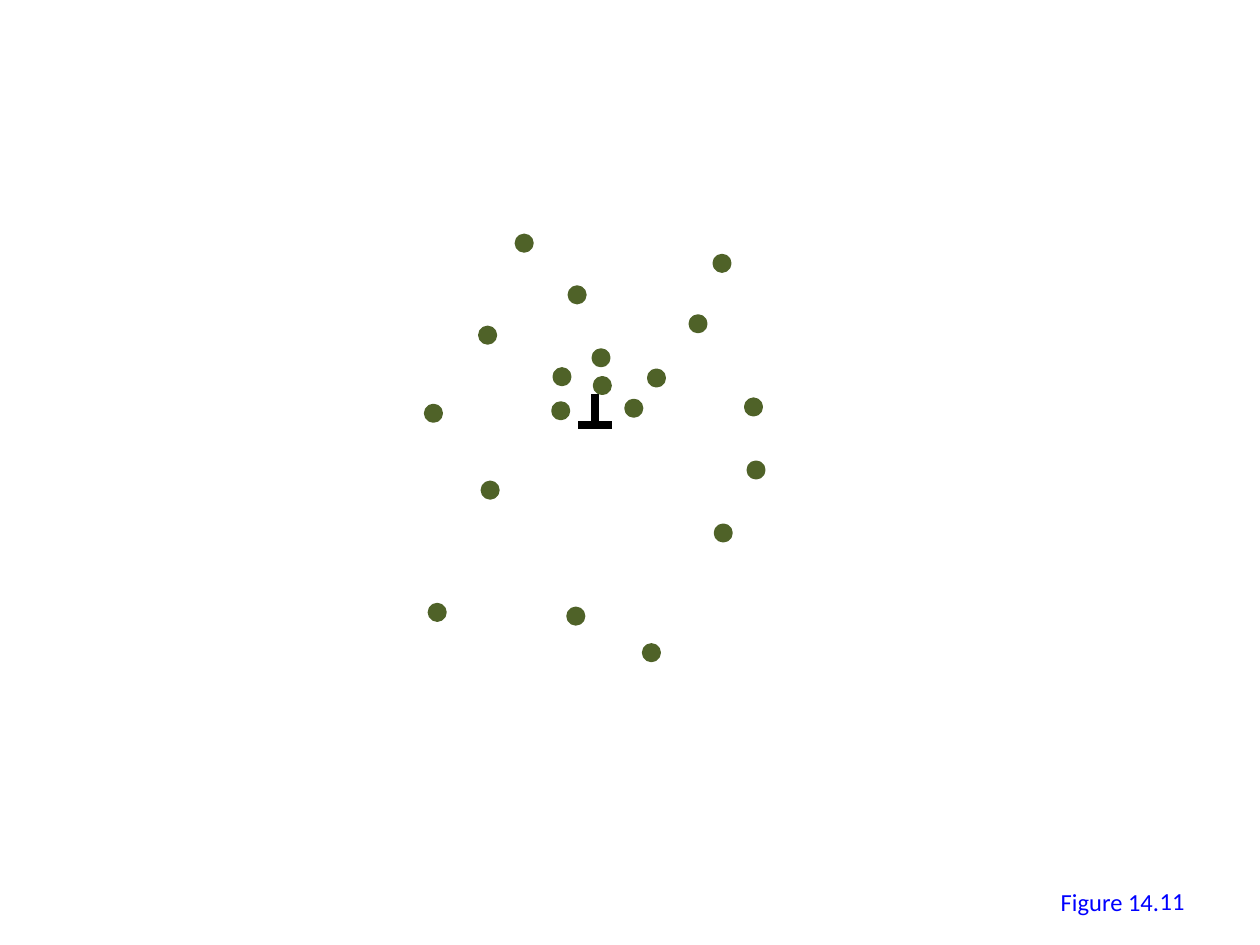
from dataclasses import dataclass

from lxml import etree
from pptx import Presentation
from pptx.dml.color import RGBColor
from pptx.enum.shapes import MSO_CONNECTOR, MSO_SHAPE
from pptx.enum.text import MSO_ANCHOR, PP_ALIGN
from pptx.oxml.ns import qn
from pptx.util import Inches, Pt

STRAIGHT = MSO_CONNECTOR.STRAIGHT
OVAL = MSO_SHAPE.OVAL
TOP, MIDDLE = MSO_ANCHOR.TOP, MSO_ANCHOR.MIDDLE
LEFT, RIGHT = PP_ALIGN.LEFT, PP_ALIGN.RIGHT

COLUMNS, ROWS = 100, 75
DOT_SIZE = 1.2


@dataclass(frozen=True)
class Theme:
    font: str = "Calibri"
    caption_size: float = 14
    caption: RGBColor = RGBColor(0x00, 0x00, 0xFF)
    dot: RGBColor = RGBColor(0x4F, 0x62, 0x28)
    dot_line: float = 2.25
    marker: RGBColor = RGBColor(0x00, 0x00, 0x00)
    marker_line: float = 4.5


class Canvas:
    def __init__(self, deck, theme):
        self.theme = theme
        self.slide = deck.slides.add_slide(deck.slide_layouts[6])
        self.column = deck.slide_width / COLUMNS
        self.row = deck.slide_height / ROWS

    def place(self, column, row):
        return round(column * self.column), round(row * self.row)

    def dot(self, column, row):
        corner = self.place(column - DOT_SIZE / 2, row - DOT_SIZE / 2)
        dot = self.slide.shapes.add_shape(OVAL, *corner, *self.place(DOT_SIZE, DOT_SIZE))
        dot.shadow.inherit = False
        dot.fill.solid()
        dot.fill.fore_color.rgb = self.theme.dot
        dot.line.color.rgb = self.theme.dot
        dot.line.width = Pt(self.theme.dot_line)

    def stroke(self, start, end):
        stroke = self.slide.shapes.add_connector(STRAIGHT, *self.place(*start), *self.place(*end))
        stroke.line.color.rgb = self.theme.marker
        stroke.line.width = Pt(self.theme.marker_line)
        etree.SubElement(stroke._element.spPr, qn("a:effectLst"))

    def text(self, words, *, corner, size, align=LEFT, anchor=TOP, wrap=True):
        box = self.slide.shapes.add_textbox(*self.place(*corner), *self.place(*size))
        frame = box.text_frame
        frame.word_wrap = wrap
        frame.vertical_anchor = anchor
        paragraph = frame.paragraphs[0]
        paragraph.text = words
        paragraph.alignment = align
        paragraph.font.name = self.theme.font
        paragraph.font.size = Pt(self.theme.caption_size)
        paragraph.font.color.rgb = self.theme.caption


DOT_CENTRES = [
    (47.8, 30.6), (44.5, 32.6), (44.6, 29.9), (47.7, 28.4), (50.3, 32.4),
    (52.1, 30), (55.4, 25.7), (57.3, 20.9), (45.8, 23.4), (41.6, 19.3),
    (38.7, 26.6), (34.4, 32.8), (38.9, 38.9), (59.8, 32.3), (60, 37.3),
    (57.4, 42.3), (45.7, 48.9), (34.7, 48.6), (51.7, 51.8),
]


def main():
    deck = Presentation()
    deck.slide_width, deck.slide_height = Inches(10), Inches(7.5)
    canvas = Canvas(deck, Theme())

    canvas.text("Figure 14.", corner=(83.2, 69.9), size=(9.9, 3.4), wrap=False)
    base_row, stem_column = 33.7, 47.2
    canvas.stroke((45.9, base_row), (48.6, base_row))
    canvas.stroke((stem_column, base_row), (stem_column, 31.3))
    for centre in DOT_CENTRES:
        canvas.dot(*centre)
    canvas.text("11", corner=(71.7, 69.5), size=(23.3, 4), align=RIGHT, anchor=MIDDLE)

    deck.save("out.pptx")


if __name__ == "__main__":
    main()
